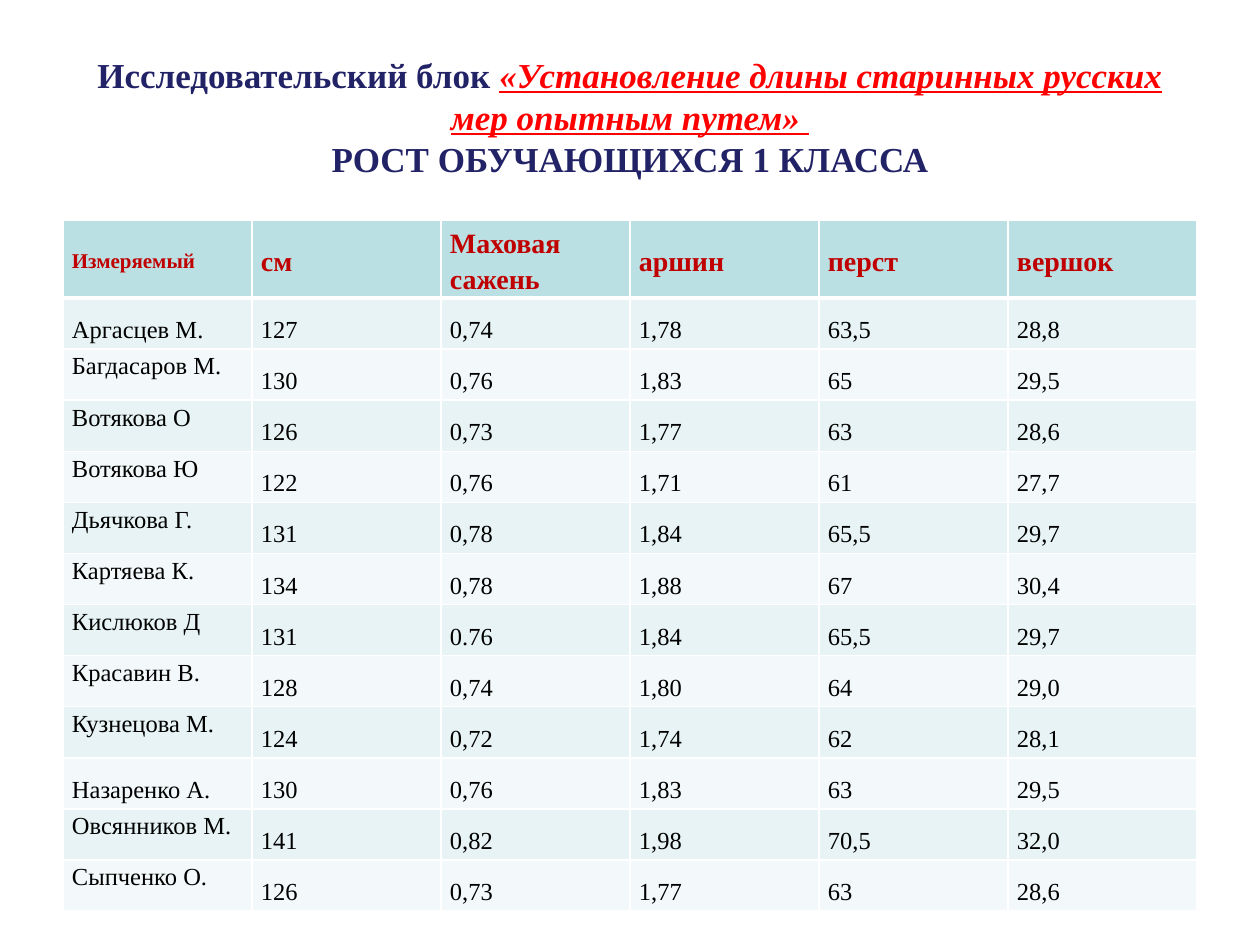
from pptx import Presentation
from pptx.dml.color import RGBColor
from pptx.enum.text import MSO_ANCHOR, PP_ALIGN
from pptx.oxml import parse_xml
from pptx.oxml.ns import nsdecls
from pptx.util import Cm, Pt

MIDDLE, TOP = MSO_ANCHOR.MIDDLE, MSO_ANCHOR.TOP
CENTER, JUSTIFY = PP_ALIGN.CENTER, PP_ALIGN.JUSTIFY

# Content
COLORS = {
    "navy": "222267", "red": "FF0000", "dark_red": "C00000", "black": "000000",
    "header": "BBE0E3", "odd": "E7F3F4", "even": "F3F9FA", "border": "FFFFFF",
}
FONT = "Times New Roman"
PLAIN_TITLE = {"size": Pt(20), "bold": True, "color": "navy"}
TOPIC_TITLE = {"size": Pt(20), "bold": True, "italic": True, "underline": True, "color": "red"}
TITLE_LINES = [
    [("Исследовательский блок ", PLAIN_TITLE),
     ("«Установление длины старинных русских мер опытным путем» ", TOPIC_TITLE)],
    [("РОСТ ОБУЧАЮЩИХСЯ 1 КЛАССА", PLAIN_TITLE)],
]
HEADER = ["Измеряемый", "см", "Маховая сажень", "аршин", "перст", "вершок"]
PUPILS = [
    ("Аргасцев М.", "127", "0,74", "1,78", "63,5", "28,8"),
    ("Багдасаров М.", "130", "0,76", "1,83", "65", "29,5"),
    ("Вотякова О", "126", "0,73", "1,77", "63", "28,6"),
    ("Вотякова Ю", "122", "0,76", "1,71", "61", "27,7"),
    ("Дьячкова Г.", "131", "0,78", "1,84", "65,5", "29,7"),
    ("Картяева К.", "134", "0,78", "1,88", "67", "30,4"),
    ("Кислюков Д", "131", "0.76", "1,84", "65,5", "29,7"),
    ("Красавин В.", "128", "0,74", "1,80", "64", "29,0"),
    ("Кузнецова М.", "124", "0,72", "1,74", "62", "28,1"),
    ("Назаренко А.", "130", "0,76", "1,83", "63", "29,5"),
    ("Овсянников М.", "141", "0,82", "1,98", "70,5", "32,0"),
    ("Сыпченко О.", "126", "0,73", "1,77", "63", "28,6"),
]
MIDDLE_NAMES = {"Аргасцев М.", "Назаренко А."}

# Layout
LEFT, WIDTH = Cm(1.27), Cm(22.86)
TITLE_TOP, TITLE_HEIGHT = Cm(0.76), Cm(3.18)
TABLE_TOP, ROW_HEIGHT = Cm(4.45), Cm(1.03)
CELL_MARGINS = {"margin_left": Cm(0.18), "margin_right": Cm(0.18),
                "margin_top": 0, "margin_bottom": 0}


def add_run(paragraph, text, style):
    run = paragraph.add_run()
    run.text = text
    run.font.name = FONT
    for name, value in style.items():
        if name == "color":
            run.font.color.rgb = RGBColor.from_string(COLORS[value])
        else:
            setattr(run.font, name, value)


def set_borders(cell, bottom_width):
    properties = cell._tc.get_or_add_tcPr()
    widths = {"lnL": Pt(1), "lnR": Pt(1), "lnT": Pt(1), "lnB": bottom_width}
    for position, (side, width) in enumerate(widths.items()):
        properties.insert(position, parse_xml(
            f'<a:{side} {nsdecls("a")} w="{width}"><a:solidFill>'
            f'<a:srgbClr val="{COLORS["border"]}"/></a:solidFill></a:{side}>'))


def fill_cell(cell, text, style, fill, anchor, spacing, bottom_width=Pt(1)):
    for name, value in CELL_MARGINS.items():
        setattr(cell, name, value)
    cell.vertical_anchor = anchor
    cell.fill.solid()
    cell.fill.fore_color.rgb = RGBColor.from_string(COLORS[fill])
    set_borders(cell, bottom_width)
    paragraph = cell.text_frame.paragraphs[0]
    paragraph.alignment = JUSTIFY
    paragraph.line_spacing = spacing
    add_run(paragraph, text, style)


def add_title(slide):
    frame = slide.shapes.add_textbox(LEFT, TITLE_TOP, WIDTH, TITLE_HEIGHT).text_frame
    frame.word_wrap = True
    frame.vertical_anchor = MIDDLE
    paragraph = frame.paragraphs[0]
    paragraph.alignment = CENTER
    for number, line in enumerate(TITLE_LINES):
        if number:
            paragraph.add_line_break()
        for text, style in line:
            add_run(paragraph, text, style)


def add_height_table(slide):
    row_count = len(PUPILS) + 1
    table = slide.shapes.add_table(row_count, len(HEADER), LEFT, TABLE_TOP,
                                   WIDTH, ROW_HEIGHT * row_count).table
    # Header row
    for column, text in enumerate(HEADER):
        style = {"size": Pt(16 if column else 12), "bold": True, "color": "dark_red"}
        fill_cell(table.cell(0, column), text, style, "header", MIDDLE, 1.15, Pt(3))
    # Pupil rows: most names sit at the top of the cell, values in the middle
    style = {"size": Pt(14), "bold": False, "color": "black"}
    for row, pupil in enumerate(PUPILS, start=1):
        fill = "odd" if row % 2 else "even"
        for column, text in enumerate(pupil):
            centered = column > 0 or text in MIDDLE_NAMES
            anchor, spacing = (MIDDLE, 1.5) if centered else (TOP, 1.15)
            fill_cell(table.cell(row, column), text, style, fill, anchor, spacing)


def main():
    presentation = Presentation()
    presentation.slide_width, presentation.slide_height = Cm(25.4), Cm(19.05)
    slide = presentation.slides.add_slide(presentation.slide_layouts[6])
    add_title(slide)
    add_height_table(slide)
    presentation.save("out.pptx")


if __name__ == "__main__":
    main()
